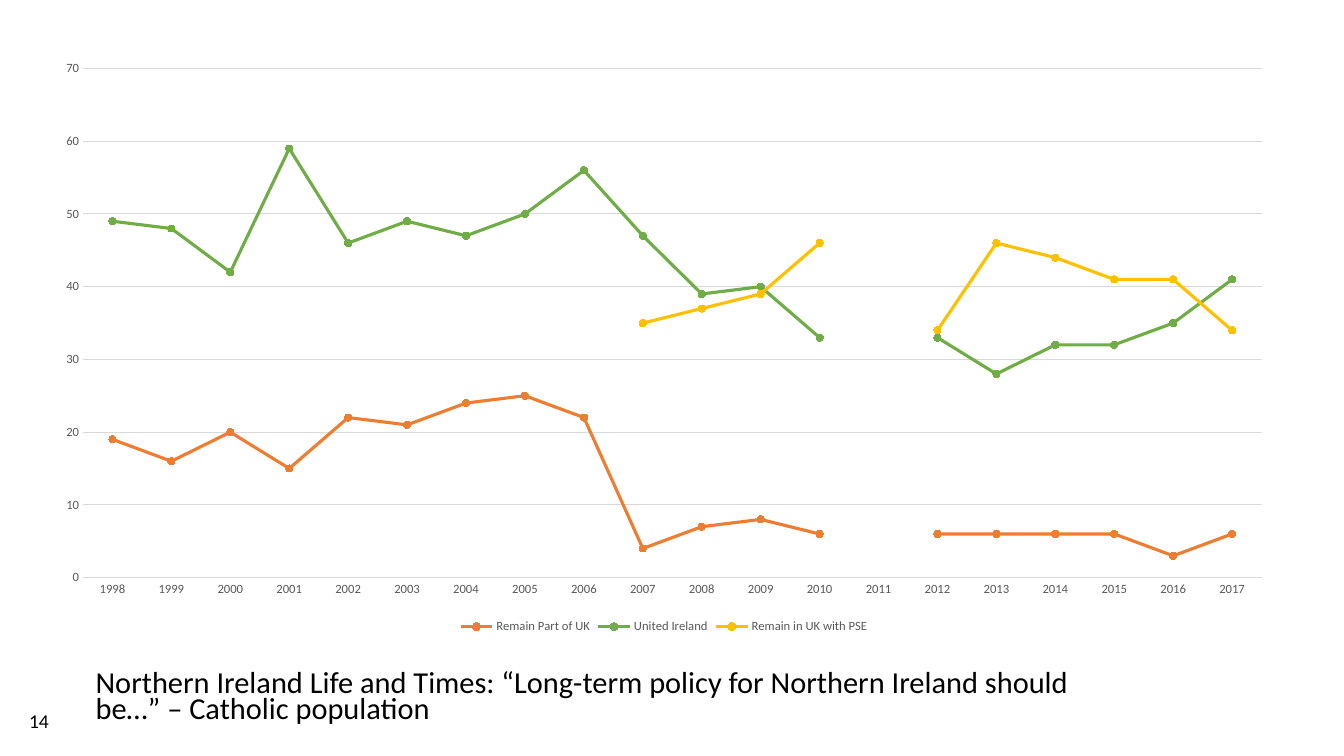
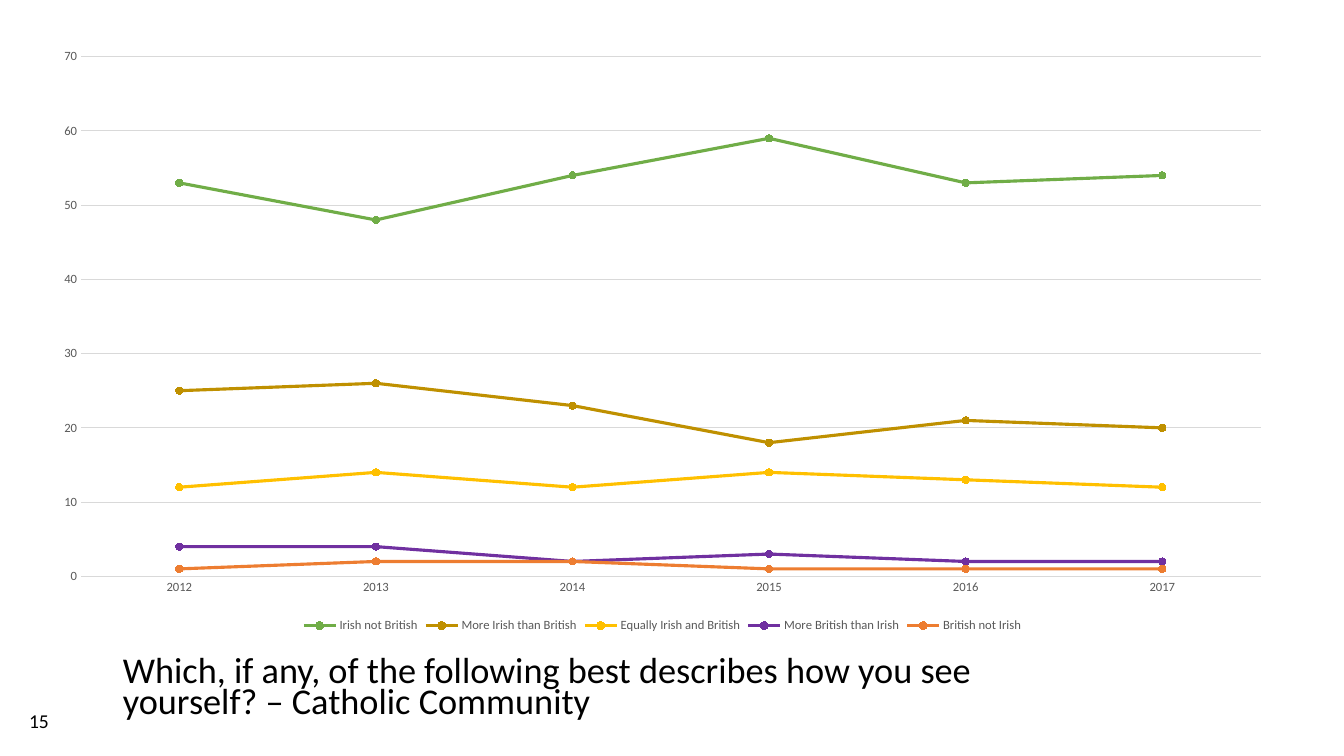
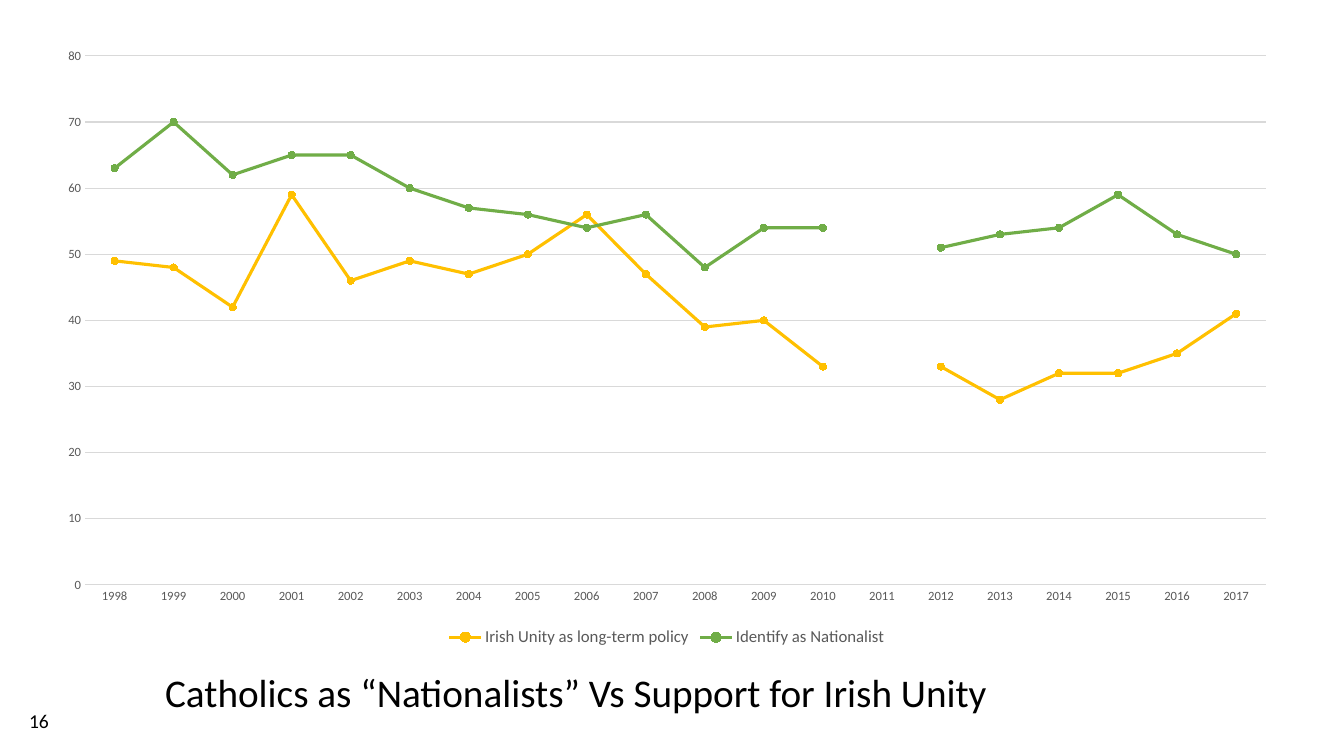
from pptx import Presentation
from pptx.chart.data import CategoryChartData
from pptx.dml.color import RGBColor
from pptx.enum.chart import (XL_CHART_TYPE as ChartType, XL_LEGEND_POSITION as LegendPosition,
                             XL_MARKER_STYLE as MarkerStyle, XL_TICK_MARK as TickMark)
from pptx.enum.text import MSO_ANCHOR as Anchor
from pptx.util import Pt

PX = 9144  # 100 px to the inch
FONT = "Calibri"
BLACK, GREY, GRID = "000000", "595959", "D9D9D9"
ORANGE, GREEN, YELLOW, OCHRE, PURPLE = "ED7D31", "70AD47", "FFC000", "BF9000", "7030A0"
NUMBER_BOX = (19, 695, 63, 40)
FIRST_NUMBER = 14

UNITED_IRELAND = [49, 48, 42, 59, 46, 49, 47, 50, 56, 47,
                  39, 40, 33, None, 33, 28, 32, 32, 35, 41]

SLIDES = [
    {
        "caption": "Northern Ireland Life and Times: “Long-term policy for Northern Ireland "
                   "should be…” – Catholic population",
        "caption_box": (85, 663, 991, 65), "caption_size": 21.7, "line_spacing": 0.7,
        "chart_box": (41, 49, 1235, 584), "top_value": 70, "legend_size": 9,
        "first_year": 1998,
        "series": [
            ("Remain Part of UK", ORANGE,
             [19, 16, 20, 15, 22, 21, 24, 25, 22, 4, 7, 8, 6, None, 6, 6, 6, 6, 3, 6]),
            ("United Ireland", GREEN, UNITED_IRELAND),
            ("Remain in UK with PSE", YELLOW,
             [None] * 9 + [35, 37, 39, 46, None, 34, 46, 44, 41, 41, 34]),
        ],
    },
    {
        "caption": "Which, if any, of the following best describes how you see yourself? "
                   "– Catholic Community",
        "caption_box": (112, 649, 924, 79), "caption_size": 25.9, "line_spacing": 0.7,
        "chart_box": (39, 37, 1236, 595), "top_value": 70, "legend_size": 9,
        "first_year": 2012,
        "series": [
            ("Irish not British", GREEN, [53, 48, 54, 59, 53, 54]),
            ("More Irish than British", OCHRE, [25, 26, 23, 18, 21, 20]),
            ("Equally Irish and British", YELLOW, [12, 14, 12, 14, 13, 12]),
            ("More British than Irish", PURPLE, [4, 4, 2, 3, 2, 2]),
            ("British not Irish", ORANGE, [1, 2, 2, 1, 1, 1]),
        ],
    },
    {
        "caption": "Catholics as “Nationalists” Vs Support for Irish Unity",
        "caption_box": (154, 663, 923, 65), "caption_size": 28, "line_spacing": 0.9,
        "chart_box": (43, 36, 1237, 610), "top_value": 80, "legend_size": 12,
        "first_year": 1998,
        "series": [
            ("Irish Unity as long-term policy", YELLOW, UNITED_IRELAND),
            ("Identify as Nationalist", GREEN,
             [63, 70, 62, 65, 65, 60, 57, 56, 54, 56,
              48, 54, 54, None, 51, 53, 54, 59, 53, 50]),
        ],
    },
]


def rgb(color):
    return RGBColor.from_string(color)


def emu(box):
    return [length * PX for length in box]


def set_font(font, size, color):
    font.name, font.size = FONT, Pt(size)
    font.color.rgb = rgb(color)


def set_line(line, color, width):
    line.color.rgb = rgb(color)
    line.width = Pt(width)


def add_text(slide, box, text, size, anchor=Anchor.TOP, line_spacing=1.0):
    frame = slide.shapes.add_textbox(*emu(box)).text_frame
    frame.word_wrap = True
    frame.vertical_anchor = anchor
    paragraph = frame.paragraphs[0]
    paragraph.text = text
    paragraph.line_spacing = line_spacing
    set_font(paragraph.font, size, BLACK)


def add_line_chart(slide, content):
    data = CategoryChartData()
    first_year, series = content["first_year"], content["series"]
    year_count = len(series[0][2])
    data.categories = [str(first_year + i) for i in range(year_count)]
    for name, _, values in series:
        data.add_series(name, values)
    chart = slide.shapes.add_chart(ChartType.LINE_MARKERS, *emu(content["chart_box"]), data).chart
    chart.has_title = False
    set_font(chart.font, 10, BLACK)

    chart.has_legend = True
    chart.legend.position = LegendPosition.BOTTOM
    chart.legend.include_in_layout = False
    set_font(chart.legend.font, content["legend_size"], GREY)

    years, percent = chart.category_axis, chart.value_axis
    for axis in (years, percent):
        axis.major_tick_mark = axis.minor_tick_mark = TickMark.NONE
        set_font(axis.tick_labels.font, 9, GREY)
    set_line(years.format.line, GRID, 0.75)
    percent.format.line.fill.background()
    percent.minimum_scale, percent.maximum_scale = 0, content["top_value"]
    percent.major_unit = 10
    set_line(percent.major_gridlines.format.line, GRID, 0.75)

    plot = chart.plots[0]
    plot.vary_by_categories = False
    for plotted, (_, color, _) in zip(plot.series, series):
        plotted.smooth = False
        set_line(plotted.format.line, color, 2.25)
        marker = plotted.marker
        marker.style, marker.size = MarkerStyle.CIRCLE, 5
        marker.format.fill.solid()
        marker.format.fill.fore_color.rgb = rgb(color)
        set_line(marker.format.line, color, 0.75)


def main():
    deck = Presentation()
    deck.slide_width, deck.slide_height = emu((1333, 750))
    blank = deck.slide_layouts[6]
    for number, content in enumerate(SLIDES, FIRST_NUMBER):
        slide = deck.slides.add_slide(blank)
        add_text(slide, NUMBER_BOX, str(number), 14, Anchor.MIDDLE)
        add_text(slide, content["caption_box"], content["caption"], content["caption_size"],
                 line_spacing=content["line_spacing"])
        add_line_chart(slide, content)
    deck.save("out.pptx")


if __name__ == "__main__":
    main()
